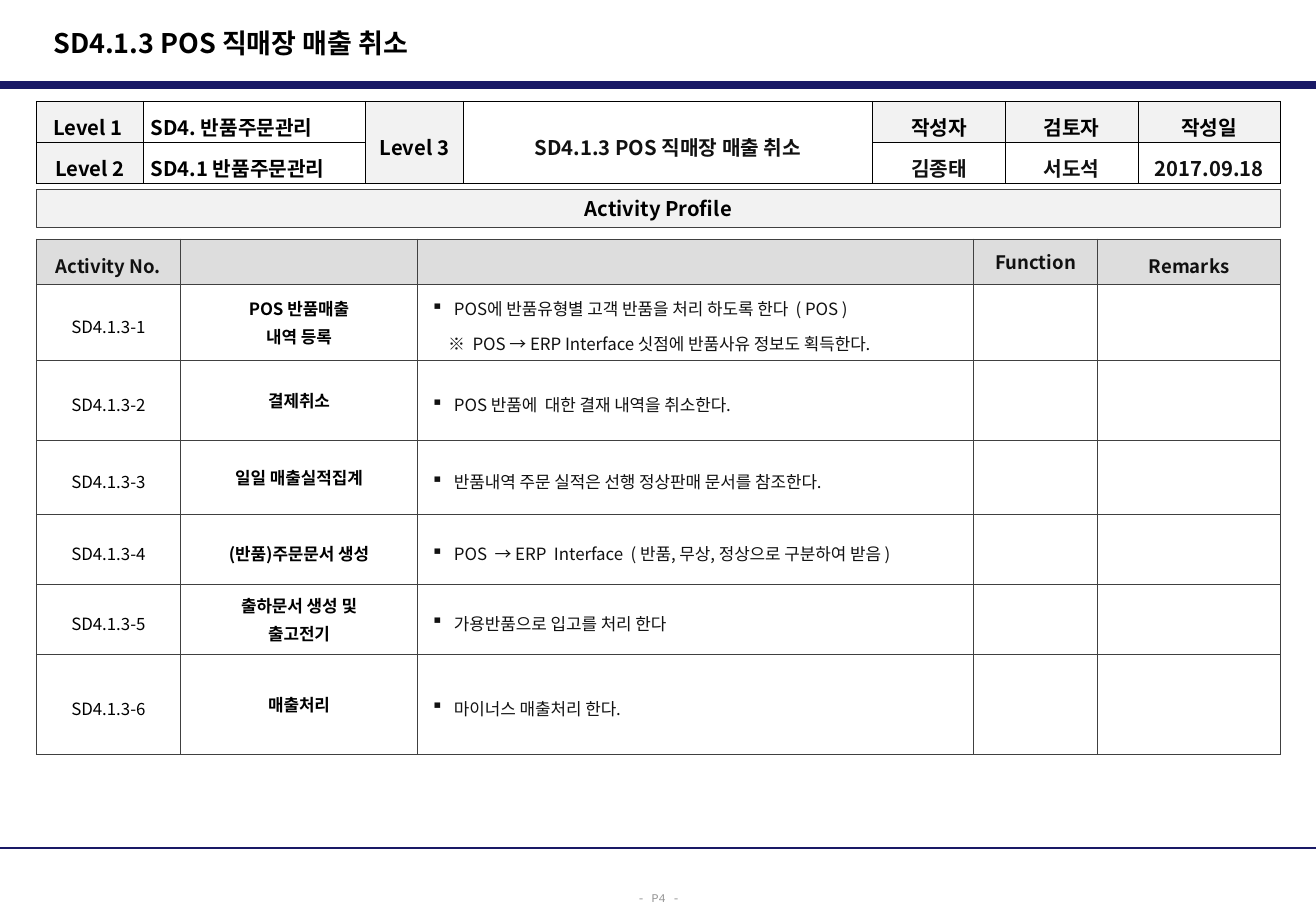
from lxml import etree
from pptx import Presentation
from pptx import util as u
from pptx.dml.color import RGBColor
from pptx.enum import shapes, text
from pptx.oxml import ns

Cm, Pt = u.Cm, u.Pt
NAVY = RGBColor(0x19, 0x19, 0x66)
BLACK = RGBColor(0, 0, 0)
INK = RGBColor(0x11, 0x11, 0x11)
BORDER = RGBColor(0x40, 0x40, 0x40)
FOOTER_GRAY = RGBColor(0x96, 0x96, 0x96)
HEAD_GRAY = RGBColor(0xDD, 0xDD, 0xDD)
LABEL_GRAY = RGBColor(0xF2, 0xF2, 0xF2)
LEFT, CENTER = text.PP_ALIGN.LEFT, text.PP_ALIGN.CENTER
MIDDLE = text.MSO_ANCHOR.MIDDLE
SHEET_LEFT, SHEET_WIDTH = 0.76, 26.01


def sub(parent, tag, **attributes):
    return etree.SubElement(parent, ns.qn(tag), attributes)


def apply(target, values):
    for name, value in values.items():
        setattr(target, name, value)


class Sheet:
    font = "Noto Sans CJK KR"

    def __init__(self, deck):
        self.slide = deck.slides.add_slide(deck.slide_layouts[5])

    def put_lines(self, frame, lines, size, color=BLACK, bold=False, align=CENTER,
                  spacing=1.0, bullet=False, font=None):
        """Fill a text frame; with bullet, the first line gets the mark."""
        for i, line in enumerate(lines):
            paragraph = frame.paragraphs[0] if i == 0 else frame.add_paragraph()
            if bullet:
                pPr = paragraph._p.get_or_add_pPr()
                if i == 0:
                    pPr.set("marL", str(Cm(0.48)))
                    pPr.set("indent", str(-Cm(0.48)))
                    sub(pPr, "a:buChar", char="▪")
                else:
                    pPr.set("marL", str(Cm(0.36)))
            apply(paragraph, {"alignment": align, "line_spacing": spacing,
                              "space_before": Pt(2 if i else 0)})
            run = paragraph.add_run()
            run.text = line
            apply(run.font, {"size": Pt(size), "bold": bold,
                             "name": font or self.font})
            run.font.color.rgb = color
            sub(run._r.get_or_add_rPr(), "a:ea", typeface=self.font)

    def title(self, words):
        heading = self.slide.shapes.title
        apply(heading, {"left": Cm(0.86), "top": Cm(0.41),
                        "width": Cm(18.06), "height": Cm(0.97)})
        apply(heading.text_frame, {"vertical_anchor": MIDDLE, "word_wrap": True,
                                   "auto_size": text.MSO_AUTO_SIZE.NONE})
        self.put_lines(heading.text_frame, [words], 16, bold=True, align=LEFT)

    def rule(self, top, weight):
        line = self.slide.shapes.add_connector(
            shapes.MSO_CONNECTOR.STRAIGHT, 0, Cm(top), Cm(27.51), Cm(top))
        line.line.color.rgb = NAVY
        line.line.width = Pt(weight)
        sub(line._element.spPr, "a:effectLst")

    def band(self, words, top, height):
        bar = self.slide.shapes.add_shape(
            shapes.MSO_SHAPE.RECTANGLE, Cm(SHEET_LEFT), Cm(top),
            Cm(SHEET_WIDTH), Cm(height))
        bar.shadow.inherit = False
        bar.fill.solid()
        bar.fill.fore_color.rgb = LABEL_GRAY
        bar.line.color.rgb = BORDER
        bar.line.width = Pt(0.5)
        apply(bar.text_frame, {"vertical_anchor": MIDDLE, "word_wrap": False})
        self.put_lines(bar.text_frame, [words], 12, bold=True)

    def footer(self, words):
        box = self.slide.shapes.add_textbox(Cm(13.06), Cm(18.42), Cm(1.42), Cm(0.64))
        box.text_frame.word_wrap = False
        self.put_lines(box.text_frame, [words], 7, FOOTER_GRAY, spacing=1.3,
                       font="Courier New")

    def table(self, top, widths, heights):
        grid = self.slide.shapes.add_table(
            len(heights), len(widths), Cm(SHEET_LEFT), Cm(top),
            Cm(SHEET_WIDTH), Cm(sum(heights))).table
        apply(grid, {"first_row": False, "horz_banding": False})
        for column, width in zip(grid.columns, widths):
            column.width = Cm(width)
        for row, height in zip(grid.rows, heights):
            row.height = Cm(height)
        return grid

    def cell(self, cell, lines, border, fill=None, inset=(0.28, 0.1), **style):
        side, end = map(Cm, inset)
        apply(cell, {"margin_left": side, "margin_right": side, "margin_top": end,
                     "margin_bottom": end, "vertical_anchor": MIDDLE})
        tcPr = cell._tc.get_or_add_tcPr()
        for edge in ("a:lnL", "a:lnR", "a:lnT", "a:lnB"):
            stroke = sub(sub(tcPr, edge, w=str(Pt(0.5))), "a:solidFill")
            sub(stroke, "a:srgbClr", val=str(border))
        if fill is None:
            cell.fill.background()
        else:
            cell.fill.solid()
            cell.fill.fore_color.rgb = fill
        if lines:
            self.put_lines(cell.text_frame, lines, **style)
        else:
            sub(cell.text_frame.paragraphs[0]._p, "a:endParaRPr", sz="1000")


PROCESS = "SD4.1.3 POS 직매장 매출 취소"
LEVELS = [
    ["Level 1 ", "SD4. 반품주문관리", "Level 3", PROCESS, "작성자", "검토자", "작성일"],
    ["Level 2", "SD4.1 반품주문관리", "", "", "김종태", "서도석", "2017.09.18"],
]
HEADINGS = ["Activity No.", "", "", "Function", "Remarks"]
# Activity name lines, their line spacing, description lines
ACTIVITIES = [
    (["POS 반품매출", "내역 등록"], 1.0,
     ["POS에 반품유형별 고객 반품을 처리 하도록 한다  ( POS )",
      "※  POS → ERP Interface 싯점에 반품사유 정보도 획득한다."]),
    (["결제취소"], 1.0, ["POS 반품에  대한 결재 내역을 취소한다."]),
    (["일일 매출실적집계"], 1.0, ["반품내역 주문 실적은 선행 정상판매 문서를 참조한다."]),
    (["(반품)주문문서 생성"], 1.3,
     ["POS  → ERP  Interface  ( 반품, 무상, 정상으로 구분하여 받음 )"]),
    (["출하문서 생성 및", "출고전기"], 1.0, ["가용반품으로 입고를 처리 한다"]),
    (["매출처리"], 1.0, ["마이너스 매출처리 한다."]),
]


def main():
    deck = Presentation()
    deck.slide_width, deck.slide_height = Cm(27.51), Cm(19.05)
    sheet = Sheet(deck)

    # Page frame
    sheet.rule(1.78, 4.5)
    sheet.footer("- P4 -")
    sheet.rule(17.73, 1.5)
    sheet.title(PROCESS)

    # Activity table
    activities = sheet.table(5, [3.01, 4.96, 11.62, 2.6, 3.82],
                             [0.94, 1.6, 1.67, 1.55, 1.46, 1.46, 2.09])
    for c, heading in enumerate(HEADINGS):
        plain = heading == "Function"
        sheet.cell(activities.cell(0, c), [heading] if heading else [], BORDER,
                   HEAD_GRAY, inset=(0.28, 0 if plain else 0.1), size=11,
                   color=INK, bold=True, spacing=1.0 if plain else 1.3)
    for r, (name, spacing, description) in enumerate(ACTIVITIES, 1):
        columns = [
            ([f"SD4.1.3-{r}"], {"spacing": 1.3}),
            (name, {"bold": True, "spacing": spacing}),
            (description, {"color": INK, "align": LEFT, "spacing": 1.3,
                           "bullet": True}),
            ([], {}),
            ([], {}),
        ]
        for c, (lines, style) in enumerate(columns):
            sheet.cell(activities.cell(r, c), lines, BORDER, size=10, **style)

    # Section band
    sheet.band("Activity Profile", 3.96, 0.79)

    # Process level table
    levels = sheet.table(2.12, [2.24, 4.64, 2.05, 8.55, 2.78, 2.77, 2.98], [0.86, 0.86])
    for c in (2, 3):
        levels.cell(0, c).merge(levels.cell(1, c))
    for r, row in enumerate(LEVELS):
        for c, entry in enumerate(row):
            is_label = c in (0, 2) or (r == 0 and c > 3)
            sheet.cell(levels.cell(r, c), [entry] if entry else [], BLACK,
                       LABEL_GRAY if is_label else None, inset=(0.15, 0.03),
                       size=12, color=INK if c > 2 and not is_label else BLACK,
                       bold=True, align=LEFT if c == 1 else CENTER, spacing=1.3)

    deck.save("out.pptx")


if __name__ == "__main__":
    main()
